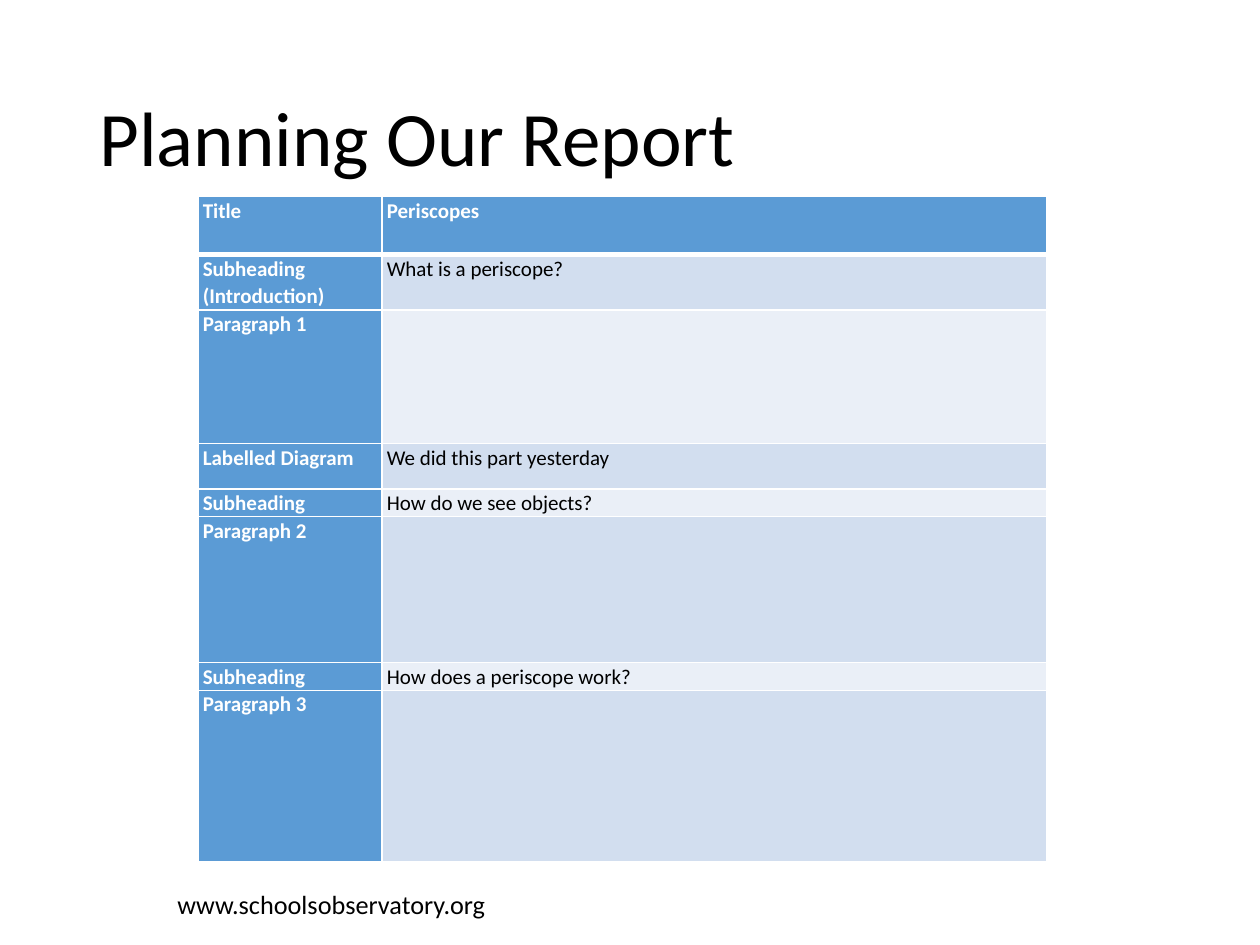
"""Builds the report planning slide: a title, a planning table and a web address."""
from lxml import etree
from pptx import Presentation, util as u
from pptx.dml.color import RGBColor
from pptx.enum import text
from pptx.oxml.ns import qn

COLORS = {
    "text": "000000",
    "white": "FFFFFF",
    "header": "5B9BD5",
    "band_dark": "D2DEEF",
    "band_light": "EAEFF7",
}
COLUMN_WIDTHS = [1.46, 5.28]
ROWS = [
    (0.46, "Title", "Periscopes"),
    (0.44, "Subheading (Introduction)", "What is a periscope?"),
    (1.06, "Paragraph 1", ""),
    (0.36, "Labelled Diagram", "We did this part yesterday"),
    (0.22, "Subheading", "How do we see objects?"),
    (1.16, "Paragraph 2", ""),
    (0.22, "Subheading", "How does a periscope work?"),
    (1.36, "Paragraph 3", ""),
]


class SlideBuilder:
    """Holds the style and the current slide."""

    def __init__(self, slide, font="Calibri"):
        self.slide = slide
        self.font = font

    def add_words(self, paragraph, words, size, color="text", bold=False, spacing=0.9):
        paragraph.alignment = text.PP_ALIGN.LEFT
        paragraph.line_spacing = spacing
        run = paragraph.add_run()
        run.text = words
        run.font.name = self.font
        run.font.size = u.Pt(size)
        run.font.bold = bold
        run.font.color.rgb = RGBColor.from_string(COLORS[color])

    def title(self, words, left, top, width, height):
        shape = self.slide.shapes.title
        shape.left, shape.top = u.Inches(left), u.Inches(top)
        shape.width, shape.height = u.Inches(width), u.Inches(height)
        shape.text_frame.vertical_anchor = text.MSO_ANCHOR.MIDDLE
        self.add_words(shape.text_frame.paragraphs[0], words, 44)

    def text_box(self, words, left, top, width, height):
        shape = self.slide.shapes.add_textbox(
            u.Inches(left), u.Inches(top), u.Inches(width), u.Inches(height))
        shape.text_frame.word_wrap = True
        self.add_words(shape.text_frame.paragraphs[0], words, 15)

    def borders(self, cell, widths):
        properties = cell._tc.get_or_add_tcPr()
        for side, width in widths.items():
            line = etree.SubElement(properties, qn(f"a:ln{side}"), w=str(u.Pt(width)))
            fill = etree.SubElement(line, qn("a:solidFill"))
            etree.SubElement(fill, qn("a:srgbClr"), val=COLORS["white"])

    def cell(self, cell, words, row, column):
        is_header = row == 0 or column == 0
        cell.margin_left = cell.margin_right = u.Inches(0.04)
        cell.margin_top = cell.margin_bottom = 0
        self.borders(cell, {"L": 1, "R": 1, "T": 3 if row == 1 else 1,
                            "B": 3 if row == 0 else 1})
        band = "band_dark" if row % 2 else "band_light"
        cell.fill.solid()
        cell.fill.fore_color.rgb = RGBColor.from_string(
            COLORS["header" if is_header else band])
        if words:
            self.add_words(cell.text_frame.paragraphs[0], words, 12,
                           "white" if is_header else "text", is_header, 1.07)

    def table(self, rows, column_widths, left, top):
        height = sum(row[0] for row in rows)
        table = self.slide.shapes.add_table(
            len(rows), len(column_widths), u.Inches(left), u.Inches(top),
            u.Inches(sum(column_widths)), u.Inches(height)).table
        for column, width in zip(table.columns, column_widths):
            column.width = u.Inches(width)
        for row, (row_height, *entries) in enumerate(rows):
            table.rows[row].height = u.Inches(row_height)
            for column, words in enumerate(entries):
                self.cell(table.cell(row, column), words, row, column)


def main():
    presentation = Presentation()
    presentation.slide_width = u.Inches(10)
    presentation.slide_height = u.Inches(7.5)
    slide = presentation.slides.add_slide(presentation.slide_layouts[5])
    builder = SlideBuilder(slide)
    builder.text_box("www.schoolsobservatory.org", 1.31, 7.03, 6.54, 0.4)
    builder.title("Planning Our Report", 0.69, 0.4, 8.62, 1.45)
    builder.table(ROWS, COLUMN_WIDTHS, 1.57, 1.56)
    presentation.save("out.pptx")


if __name__ == "__main__":
    main()
